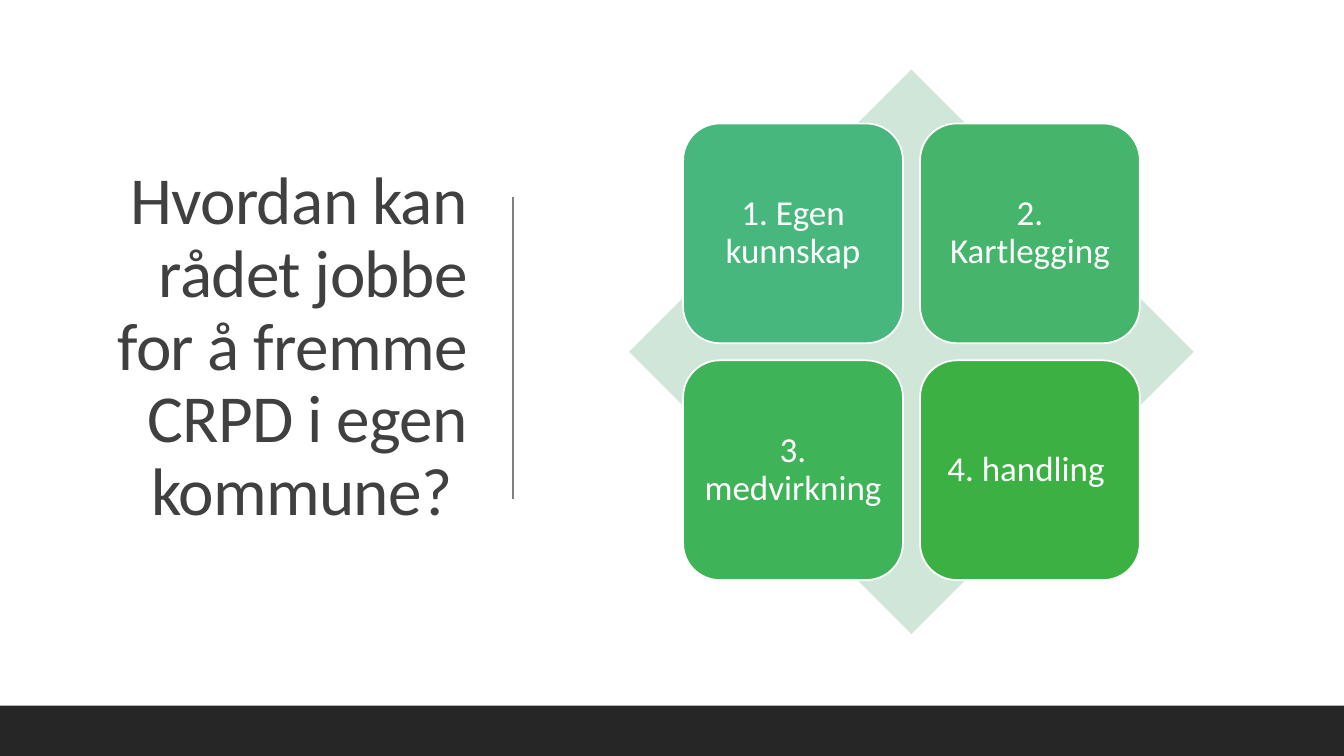
import pptx
import pptx.dml.color
import pptx.enum.shapes
import pptx.enum.text
import pptx.oxml.ns
import pptx.util
import lxml.etree

Inches = pptx.util.Inches
Shapes = pptx.enum.shapes.MSO_SHAPE
Align = pptx.enum.text.PP_ALIGN

COLOURS = {
    "page": "FFFFFF",
    "title": "404040",
    "rule": "808080",
    "footer": "262626",
    "diamond": "CFE6D8",
    "card_text": "FFFFFF",
    "card_line": "FFFFFF",
}
CARDS = [
    ("1. Egen kunnskap", "48B77E"),
    ("2. Kartlegging", "44B56B"),
    ("3. medvirkning", "3FB357"),
    ("4. handling ", "3BB143"),
]


def colour(value):
    """Return the colour for a hex string."""
    return pptx.dml.color.RGBColor.from_string(value)


def write_text(shape, text, size, hex_colour, align, inset=0.1, after=0, tracking=None):
    """Write one vertically centred paragraph into a shape."""
    frame = shape.text_frame
    frame.word_wrap = True
    frame.vertical_anchor = pptx.enum.text.MSO_ANCHOR.MIDDLE
    frame.margin_left = frame.margin_right = Inches(inset)
    frame.margin_top = frame.margin_bottom = Inches(inset)
    para = frame.paragraphs[0]
    para.alignment = align
    para.line_spacing = 0.9
    para.space_after = pptx.util.Pt(after)
    span = para.add_run()
    span.text = text
    span.font.name = "Calibri"
    span.font.size = pptx.util.Pt(size)
    span.font.color.rgb = colour(hex_colour)
    if tracking is not None:
        span.font._element.set("spc", str(int(tracking * 100)))


def add_block(shapes, kind, left, top, width, height, fill, line=None):
    """Add a filled preset shape with an optional outline."""
    block = shapes.add_shape(kind, Inches(left), Inches(top), Inches(width), Inches(height))
    block.shadow.inherit = False
    block.fill.solid()
    block.fill.fore_color.rgb = colour(fill)
    if line:
        block.line.color.rgb = colour(line)
        block.line.width = pptx.util.Pt(1.25)
    else:
        block.line.fill.background()
    return block


def add_title(page, left, top, width, height):
    """Add the right-aligned question and the rule beside it."""
    box = page.shapes.add_textbox(Inches(left), Inches(top), Inches(width), Inches(height))
    write_text(box, "Hvordan kan rådet jobbe for å fremme CRPD i egen kommune? ",
               48, COLOURS["title"], Align.RIGHT, tracking=-0.5)
    rule_left = Inches(left + width + 0.36)
    rule_top = top + height / 2 - 1.5
    rule = page.shapes.add_connector(
        pptx.enum.shapes.MSO_CONNECTOR.STRAIGHT,
        rule_left, Inches(rule_top), rule_left, Inches(rule_top + 3))
    rule.line.color.rgb = colour(COLOURS["rule"])
    rule.line.width = pptx.util.Pt(1)
    lxml.etree.SubElement(rule._element.spPr, pptx.oxml.ns.qn("a:effectLst"))


def add_matrix(page, left, top, side):
    """Add the diamond with four cards centred on it in a two by two grid."""
    group = page.shapes.add_group_shape()
    add_block(group.shapes, Shapes.DIAMOND, left, top, side, side, COLOURS["diamond"])
    card, step = 2.18, 2.35
    margin = (side - card - step) / 2
    for index, (text, fill) in enumerate(CARDS):
        row, column = divmod(index, 2)
        block = add_block(group.shapes, Shapes.ROUNDED_RECTANGLE,
                          left + margin + column * step, top + margin + row * step,
                          card, card, fill, COLOURS["card_line"])
        write_text(block, text, 25, COLOURS["card_text"], Align.CENTER,
                   inset=0.09, after=8.75)


def main():
    """Build the slide and save it."""
    deck = pptx.Presentation()
    deck.slide_width, deck.slide_height = Inches(13.33), Inches(7.5)
    page = deck.slides.add_slide(deck.slide_layouts[6])
    page.background.fill.solid()
    page.background.fill.fore_color.rgb = colour(COLOURS["page"])
    add_title(page, 0.7, 0.69, 4.03, 5.53)
    add_block(page.shapes, Shapes.RECTANGLE, 0, 7, 13.33, 0.5, COLOURS["footer"])
    add_matrix(page, 6.24, 0.69, 5.6)
    deck.save("out.pptx")


if __name__ == "__main__":
    main()
